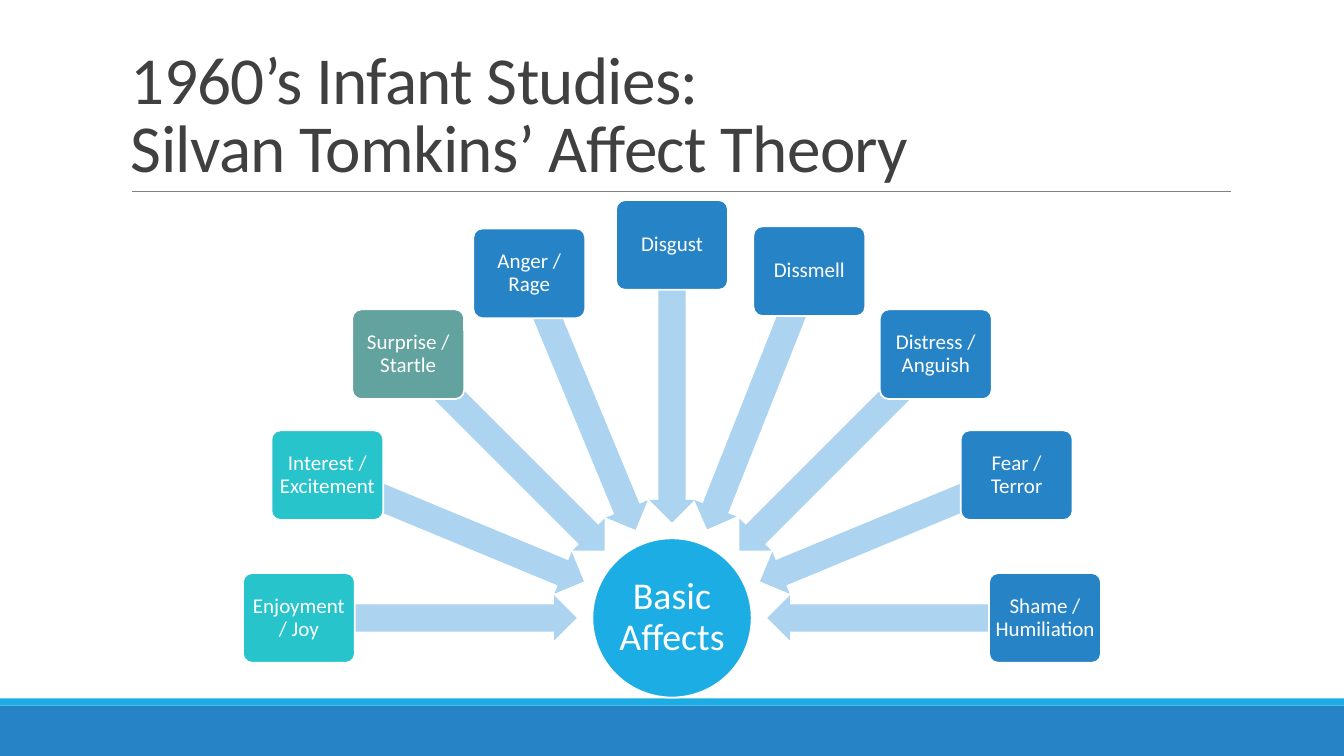
from math import cos, radians, sin

from lxml.etree import SubElement
from pptx import Presentation
from pptx.dml.color import RGBColor
from pptx.enum.shapes import MSO_CONNECTOR as CONN, MSO_SHAPE as SHAPE
from pptx.enum.text import MSO_ANCHOR as ANCHOR, PP_ALIGN as ALIGN
from pptx.oxml.ns import qn
from pptx.util import Pt

PX = 9144
WHITE, BLUE, SKY, TEAL, SAGE = "FFFFFF", "2683C6", "1CADE4", "28C4CC", "62A39F"
AFFECTS = [
    ("Enjoyment / Joy", TEAL, 180),
    ("Interest / Excitement", TEAL, 202.5),
    ("Surprise / Startle", SAGE, 225),
    ("Anger / Rage", BLUE, 247.5),
    ("Disgust", BLUE, 270),
    ("Dissmell", BLUE, 291.6),
    ("Distress / Anguish", BLUE, 315),
    ("Fear / Terror", BLUE, 337.5),
    ("Shame / Humiliation", BLUE, 360),
]


def px(*lengths):
    """Turn px lengths into EMU."""
    return [round(n * PX) for n in lengths]


def rgb(value):
    """Turn a hex string into a colour."""
    return RGBColor.from_string(value)


def assign(target, values):
    """Set attributes from a dict."""
    for name, value in values.items():
        setattr(target, name, value)


def add_block(s, kind, box, fill, outline=None):
    """Add a filled preset shape."""
    sp = s.shapes.add_shape(kind, *px(*box))
    sp.shadow.inherit = False
    sp.fill.solid()
    sp.fill.fore_color.rgb = rgb(fill)
    if outline:
        sp.line.color.rgb = rgb(outline)
        sp.line.width = Pt(1.25)
    else:
        sp.line.fill.background()
    return sp


def write(sp, text, size, color, spacing, inset, anchor, align):
    """Fill a shape with one styled paragraph."""
    tf = sp.text_frame
    margin = px(inset)[0]
    sides = ("left", "right", "top", "bottom")
    assign(tf, {f"margin_{side}": margin for side in sides})
    assign(tf, {"word_wrap": True, "vertical_anchor": anchor, "text": text})
    p = tf.paragraphs[0]
    assign(p, {"alignment": align, "line_spacing": spacing})
    for r in p.runs:
        assign(r.font, {"name": "Calibri", "size": Pt(size)})
        r.font.color.rgb = rgb(color)
    return p


def add_footer(s, box):
    """Draw the two-tone band at the foot of the slide."""
    x, y, w, h = box
    add_block(s, SHAPE.RECTANGLE, (x, y + 7, w, h - 7), BLUE)
    add_block(s, SHAPE.RECTANGLE, (x, y, w, 7), SKY)


def add_title(s, box):
    """Place the title and the rule under it."""
    x, y, w, h = box
    bottom = y + h
    rule = s.shapes.add_connector(CONN.STRAIGHT, *px(x + 11, bottom, x + w + 1, bottom))
    rule.line.color.rgb = rgb("808080")
    rule.line.width = Pt(0.5)
    SubElement(rule._element.spPr, qn("a:effectLst"))
    tb = s.shapes.add_textbox(*px(*box))
    text = "1960’s Infant Studies: \vSilvan Tomkins’ Affect Theory"
    p = write(tb, text, 48, "404040", 0.85, 10, ANCHOR.BOTTOM, ALIGN.LEFT)
    tb.text_frame.margin_top = tb.text_frame.margin_bottom = px(5)[0]
    for r in p.runs:
        r.font._element.set("spc", "-50")


def add_radial(s, box):
    """Draw the hub with the affects fanned out around it."""
    x, y, w, h = box
    hub, card_w, card_h, arrow_w, arrow_h = 158, 111, 89, 275, 45
    cx, cy, radius = x + w / 2, y + h - hub / 2, (w - card_w) / 2

    def around(angle, distance, width, height):
        """Give the box centred at an angle and distance from the hub."""
        mid_x = cx + distance * cos(radians(angle))
        mid_y = cy + distance * sin(radians(angle))
        return mid_x - width / 2, mid_y - height / 2, width, height

    centre = add_block(s, SHAPE.OVAL, around(0, 0, hub, hub), SKY, WHITE)
    write(centre, "Basic Affects", 27, WHITE, 0.9, 2, ANCHOR.MIDDLE, ALIGN.CENTER)
    for name, color, angle in AFFECTS:
        arrow_box = around(angle, 232, arrow_w, arrow_h)
        arrow = add_block(s, SHAPE.LEFT_ARROW, arrow_box, "ACD3EF")
        arrow.adjustments[0] = 0.6
        arrow.rotation = angle % 360
        card_box = around(angle, radius, card_w, card_h)
        card = add_block(s, SHAPE.ROUNDED_RECTANGLE, card_box, color, WHITE)
        card.adjustments[0] = 0.1
        write(card, name, 15, WHITE, 0.9, 3, ANCHOR.MIDDLE, ALIGN.CENTER)


def main():
    """Build and save the slide."""
    prs = Presentation()
    prs.slide_width, prs.slide_height = px(1333, 750)
    s = prs.slides.add_slide(prs.slide_layouts[6])
    add_footer(s, (0, 693, 1333, 57))
    add_title(s, (120, 31, 1100, 159))
    add_radial(s, (241, 199, 851, 493))
    prs.save("out.pptx")


if __name__ == "__main__":
    main()
